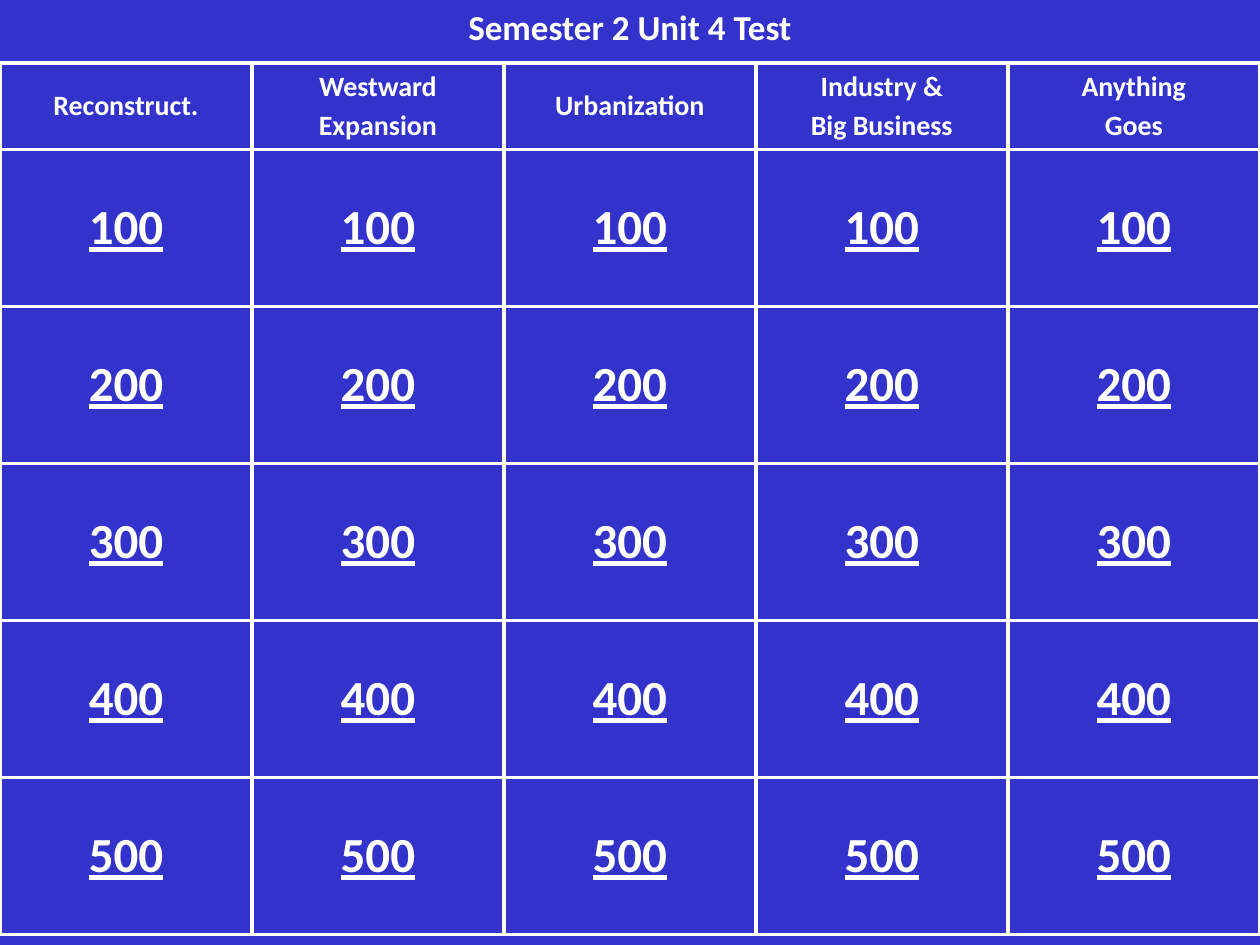
from lxml import etree
from pptx import Presentation
from pptx.dml.color import RGBColor
from pptx.enum.text import MSO_ANCHOR, PP_ALIGN
from pptx.oxml.ns import qn
from pptx.util import Inches, Pt

MIDDLE = MSO_ANCHOR.MIDDLE
CENTER = PP_ALIGN.CENTER
PX = Inches(1) // 126
COLORS = {"board": "3333CC", "text": "FFFFFF", "grid": "FFFFFF"}
FONT = "Calibri"
TITLE = "Semester 2 Unit 4 Test"
CATEGORIES = [
    ["Reconstruct."],
    ["Westward", "Expansion"],
    ["Urbanization"],
    ["Industry &", "Big Business"],
    ["Anything", "Goes"],
]
POINTS = [100, 200, 300, 400, 500]
HEADER_HEIGHT = 86


def px(length):
    return length * PX


def paint(fill, color):
    fill.solid()
    fill.fore_color.rgb = RGBColor.from_string(COLORS[color])


def write_lines(frame, lines, size, underline=None, space_ratio=0):
    for index, line in enumerate(lines):
        paragraph = frame.paragraphs[0] if index == 0 else frame.add_paragraph()
        paragraph.alignment = CENTER
        paragraph.space_before = Pt(size * space_ratio)
        run = paragraph.add_run()
        run.text = line
        run.font.name = FONT
        run.font.size = Pt(size)
        run.font.bold = True
        run.font.underline = underline
        run.font.color.rgb = RGBColor.from_string(COLORS["text"])


def draw_borders(cell):
    properties = cell._tc.get_or_add_tcPr()
    for position, side in enumerate(("a:lnL", "a:lnR", "a:lnT", "a:lnB")):
        border = etree.Element(qn(side), w=str(Pt(2.25)))
        fill = etree.SubElement(border, qn("a:solidFill"))
        etree.SubElement(fill, qn("a:srgbClr"), val=COLORS["grid"])
        properties.insert(position, border)


def fill_cell(cell, lines, size, underline=None):
    cell.vertical_anchor = MIDDLE
    paint(cell.fill, "board")
    draw_borders(cell)
    write_lines(cell.text_frame, lines, size, underline, space_ratio=0.2)


def add_title(slide, left, top, width, height):
    title = slide.shapes.add_textbox(px(left), px(top), px(width), px(height))
    frame = title.text_frame
    frame.word_wrap = True
    frame.vertical_anchor = MIDDLE
    write_lines(frame, [TITLE], 20)


def add_board(slide, left, top, width, height):
    board = slide.shapes.add_table(
        len(POINTS) + 1, len(CATEGORIES), px(left), px(top), px(width), px(height)
    ).table
    board.first_row = False
    board.horz_banding = False
    point_height = (height - HEADER_HEIGHT) // len(POINTS)
    board.rows[0].height = px(HEADER_HEIGHT)
    for row in range(1, len(POINTS) + 1):
        board.rows[row].height = px(point_height)
    for column, category in enumerate(CATEGORIES):
        board.columns[column].width = px(width // len(CATEGORIES))
        fill_cell(board.cell(0, column), category, 16)
        for row, points in enumerate(POINTS, start=1):
            fill_cell(board.cell(row, column), [str(points)], 28, underline=True)


def main():
    deck = Presentation()
    deck.slide_width = px(1260)
    deck.slide_height = px(945)
    slide = deck.slides.add_slide(deck.slide_layouts[6])
    paint(slide.background.fill, "board")
    add_board(slide, 0, 63, 1260, 871)
    add_title(slide, 94, 0, 1072, 53)
    deck.save("out.pptx")


if __name__ == "__main__":
    main()
